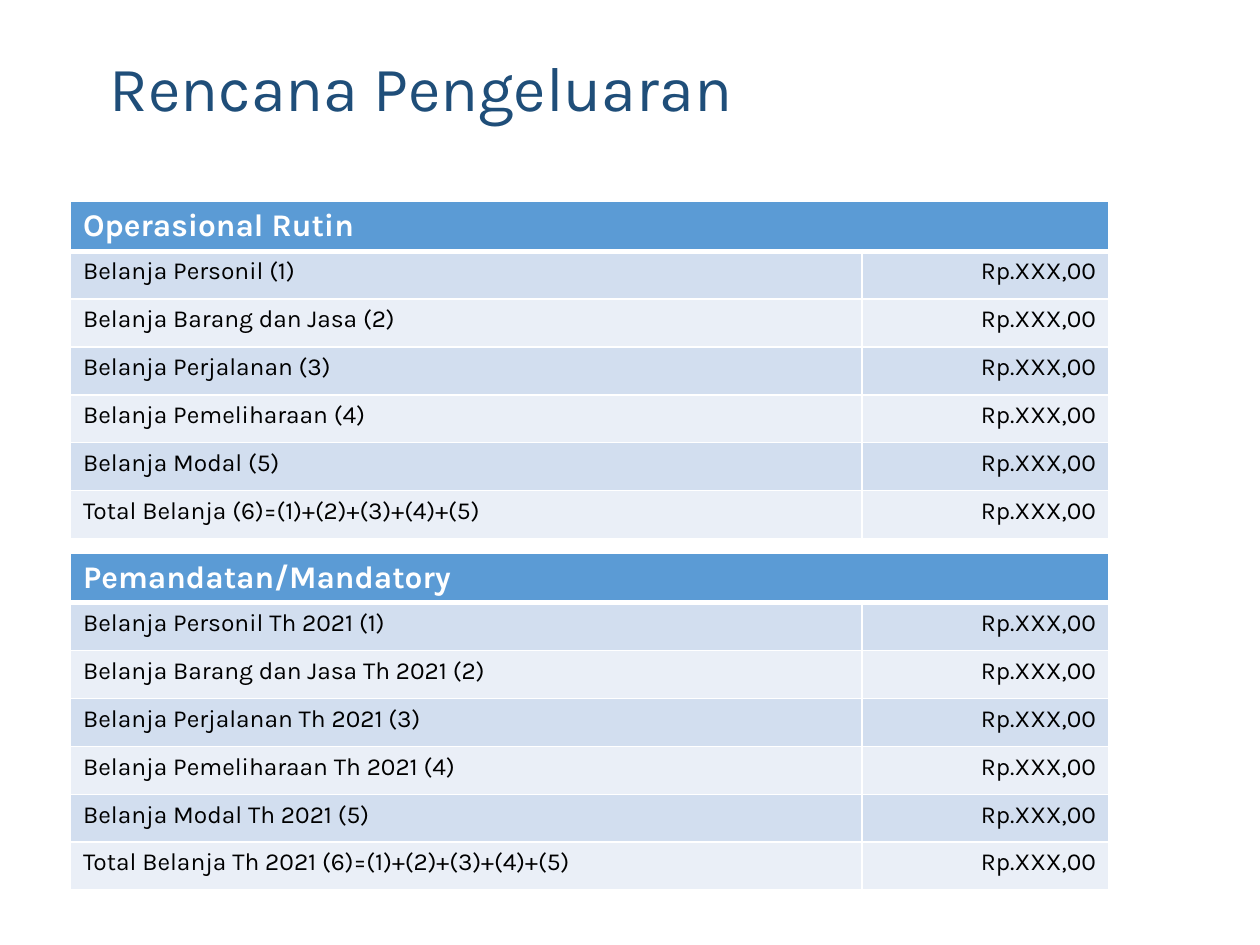
from lxml import etree
from pptx import Presentation
from pptx.dml.color import RGBColor
from pptx.enum import text
from pptx.oxml import ns
from pptx.util import Inches, Pt

NAVY = RGBColor(0x1F, 0x4E, 0x79)
BLUE = RGBColor(0x5B, 0x9B, 0xD5)
BAND_DARK = RGBColor(0xD2, 0xDE, 0xEF)
BAND_LIGHT = RGBColor(0xEA, 0xEF, 0xF7)
WHITE = RGBColor(0xFF, 0xFF, 0xFF)
BLACK = RGBColor(0, 0, 0)

TITLE = {"size": Pt(36), "name": "Karla", "bold": False}
HEADER = {"size": Pt(18), "name": "Karla", "bold": True}
BODY = {"size": Pt(14), "name": "Karla", "bold": False}

ITEMS = ["Belanja Personil", "Belanja Barang dan Jasa", "Belanja Perjalanan",
         "Belanja Pemeliharaan", "Belanja Modal", "Total Belanja"]
TOTAL_FORMULA = "=(1)+(2)+(3)+(4)+(5)"
AMOUNT = "Rp.XXX,00"


def write(paragraph, content, style, color, alignment=text.PP_ALIGN.LEFT):
    run = paragraph.add_run()
    run.text = content
    for attribute, value in style.items():
        setattr(run.font, attribute, value)
    run.font.color.rgb = color
    paragraph.alignment = alignment


def format_cell(cell, fill, top=1, bottom=1):
    cell.fill.solid()
    cell.fill.fore_color.rgb = fill
    properties = cell._tc.get_or_add_tcPr()
    # Borders come before the fill
    sides = {"lnL": 1, "lnR": 1, "lnT": top, "lnB": bottom}
    for position, (side, width) in enumerate(sides.items()):
        line = etree.Element(ns.qn(f"a:{side}"), w=str(Pt(width)))
        solid = etree.SubElement(line, ns.qn("a:solidFill"))
        etree.SubElement(solid, ns.qn("a:srgbClr"), val=str(WHITE))
        properties.insert(position, line)


presentation = Presentation()
presentation.slide_width = Inches(10)
presentation.slide_height = Inches(7.5)
slide = presentation.slides.add_slide(presentation.slide_layouts[5])

# Title
title = slide.shapes.title
title.left, title.top = Inches(0.77), Inches(0)
title.width, title.height = Inches(8.62), Inches(1.45)
frame = title.text_frame
frame.auto_size = text.MSO_AUTO_SIZE.NONE
frame.vertical_anchor = text.MSO_ANCHOR.MIDDLE
frame.paragraphs[0].line_spacing = 0.9
write(frame.paragraphs[0], "Rencana Pengeluaran", TITLE, NAVY)

# Spending tables: heading, suffix of each item, top
for heading, suffix, top in [("Operasional Rutin", "", 1.6),
                             ("Pemandatan/Mandatory", " Th 2021", 4.39)]:
    table = slide.shapes.add_table(len(ITEMS) + 1, 2, Inches(0.56), Inches(top),
                                   Inches(8.24), Inches(2.68)).table
    table.columns[0].width = Inches(6.28)
    table.columns[1].width = Inches(1.96)
    for row in table.rows:
        row.height = Inches(0.38)
    table.rows[0].height = Inches(0.39)

    # Header row
    for cell in table.rows[0].cells:
        format_cell(cell, BLUE, bottom=3)
    table.cell(0, 0).merge(table.cell(0, 1))
    write(table.cell(0, 0).text_frame.paragraphs[0], heading, HEADER, WHITE)

    # Banded item rows
    for number, item in enumerate(ITEMS, 1):
        label = f"{item}{suffix} ({number})"
        if number == len(ITEMS):
            label += TOTAL_FORMULA
        name_cell, amount_cell = table.rows[number].cells
        for cell in (name_cell, amount_cell):
            format_cell(cell, BAND_DARK if number % 2 else BAND_LIGHT,
                        top=3 if number == 1 else 1)
        write(name_cell.text_frame.paragraphs[0], label, BODY, BLACK)
        write(amount_cell.text_frame.paragraphs[0], AMOUNT, BODY, BLACK,
              text.PP_ALIGN.RIGHT)

presentation.save("out.pptx")
